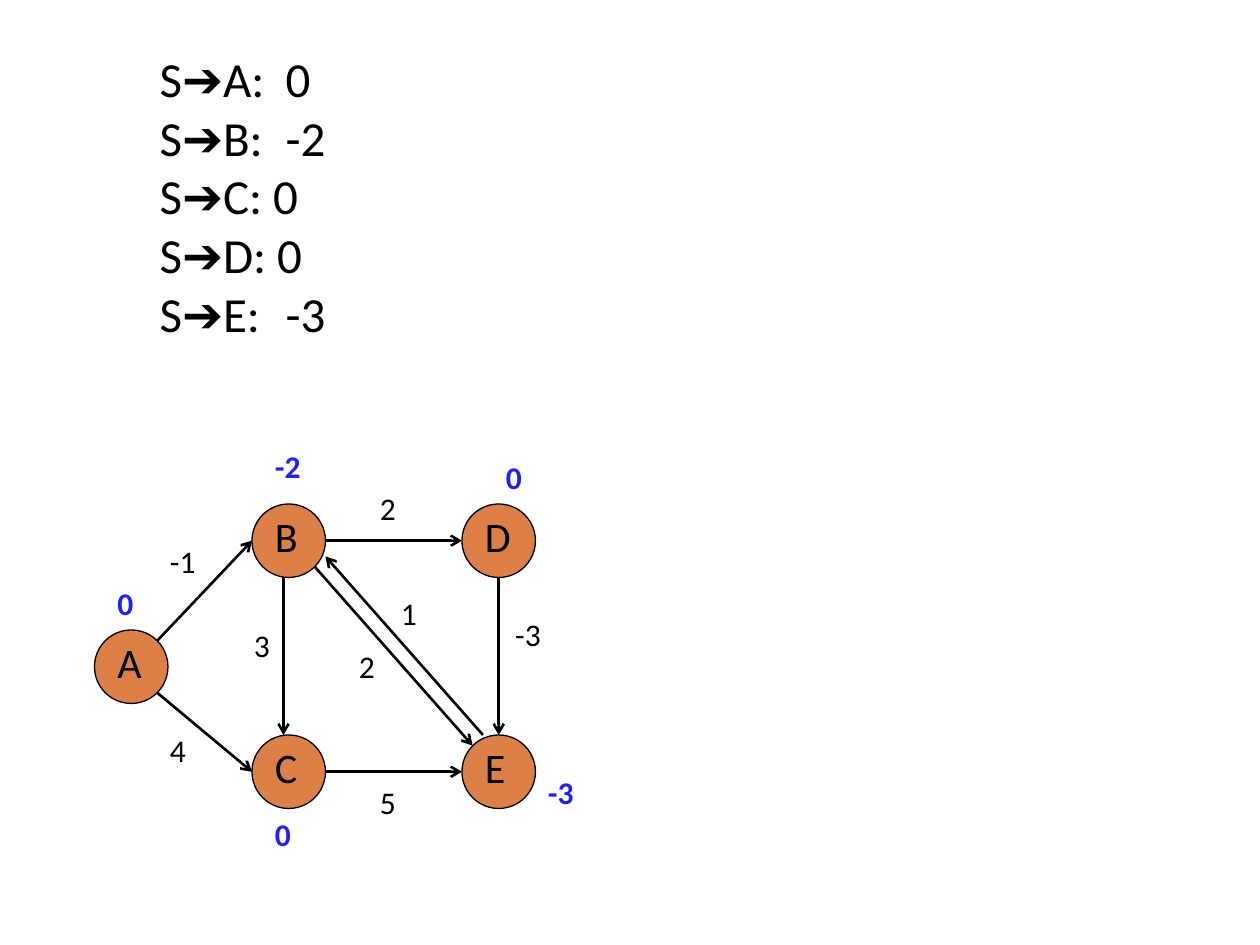
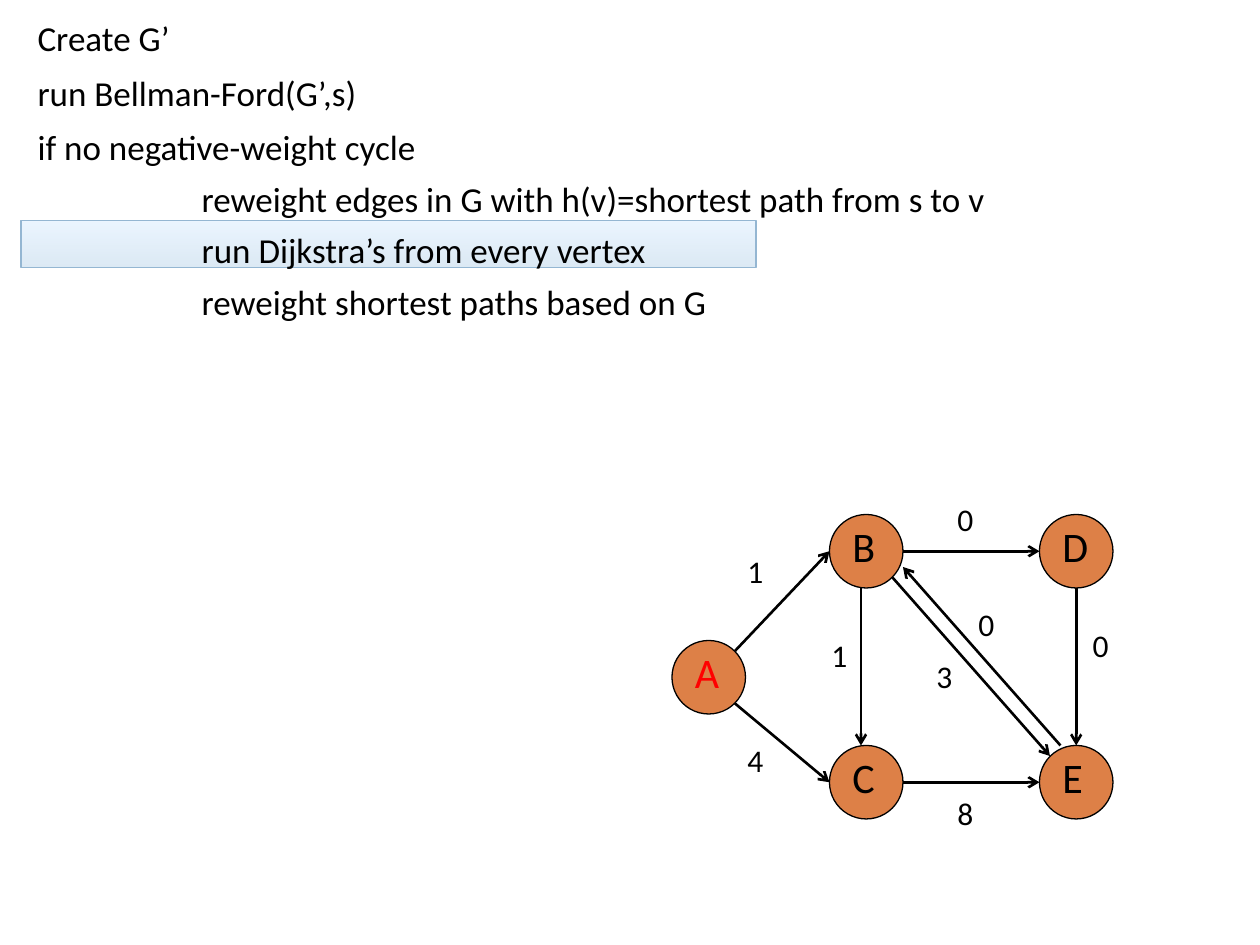
from lxml.etree import SubElement
from pptx import Presentation
from pptx.dml.color import RGBColor as Rgb
from pptx.enum.shapes import MSO_CONNECTOR as Connector, MSO_SHAPE as Preset
from pptx.enum.text import MSO_ANCHOR as Anchor, MSO_AUTO_SIZE as AutoSize
from pptx.oxml.ns import qn
from pptx.util import Pt

# Content: (span text, font role) lists, graph nodes and edges
DISTANCE_LINES = ["A:\t0", "B: \t-2", "C: 0", "D: 0", "E: \t-3"]
ALGORITHM_STEPS = [
    (0, "Create G’"),
    (0, "run Bellman-Ford(G’,s)"),
    (0, "if no negative-weight cycle"),
    (1, "reweight edges in G with h(v)=shortest path from s to v"),
    (1, "run Dijkstra’s from every vertex"),
    (1, "reweight shortest paths based on G"),
]
NODES = {"A": (72, 480), "B": (192, 384), "C": (192, 560), "E": (352, 560), "D": (352, 384)}
# Edge: start, end, place of its weight
EDGES = {
    "AB": ((120, 488), (192, 412), (120, 408)),
    "AC": ((120, 528), (192, 588), (120, 552)),
    "BD": ((248, 412), (352, 412), (280, 368)),
    "DE": ((380, 440), (380, 560), (383, 464)),
    "EB": ((368, 560), (248, 424), (296, 448)),
    "BE": ((240, 432), (360, 568), (264, 488)),
    "CE": ((248, 588), (352, 588), (280, 592)),
    "BC": ((216, 440), (216, 560), (184, 472)),
}
ORIGINAL_WEIGHTS = {"AB": "-1", "AC": "4", "BD": "2", "DE": "-3",
                    "EB": "1", "BE": "2", "CE": "5", "BC": "3"}
REWEIGHTED = {"AB": "1", "AC": "4", "BD": "0", "DE": "0",
              "EB": "0", "BE": "3", "CE": "8", "BC": "1"}
DISTANCES = [("-2", (200, 336)), ("0", (80, 440)), ("0", (200, 616)),
             ("0", (376, 344)), ("-3", (408, 584))]

# Layout, in px at 96 to the inch
PX = 9525
PAGE_SIZE = (960, 720)
NODE_SIZE, NAME_INSET, NAME_SIZE = 56, 8, 48
LABEL_HEIGHT = 38
LABEL_WIDTHS = {1: 33, 2: 41}
REWEIGHTED_SHIFT = (440, 8)
DISTANCE_BOX = (112, 32, 248, 236)
STEPS_BOX = (19, 8, 808, 248)
HIGHLIGHT_BOX = (16, 168, 560, 36)
STEP_INDENT = 125


class Theme:
    font, symbol_font = "Calibri", "Arial"
    black, red, blue = (Rgb.from_string(c) for c in ("000000", "FF0000", "1F1FFF"))
    node = Rgb.from_string("DD8047")
    highlight_line = Rgb.from_string("94B6D2")
    highlight_stops = [Rgb.from_string(c) for c in ("8BB7DB", "BDDFFF")]
    highlight_alpha = "30000"
    distance_size, node_size, step_size, label_size = Pt(28), Pt(24), Pt(20), Pt(18)
    step_gaps = [Pt(7), Pt(5.5)]
    outline, edge, highlight_edge = Pt(0.75), Pt(1.5), Pt(0.79)


def emu(*lengths):
    return [length * PX for length in lengths]


def apply(target, **values):
    for name, value in values.items():
        setattr(target, name, value)


def add_span(para, text, size, color=Theme.black, font=Theme.font, bold=False):
    span = para.add_run()
    span.text = text
    apply(span.font, name=font, size=size, bold=bold)
    span.font.color.rgb = color


def add_text(shapes, text, place, size, wrap=False, **look):
    box = shapes.add_textbox(*emu(*place))
    apply(box.text_frame, word_wrap=wrap, auto_size=AutoSize.NONE)
    add_span(box.text_frame.paragraphs[0], text, size, **look)


def add_label(page, text, spot, **look):
    place = (*spot, LABEL_WIDTHS[len(text)], LABEL_HEIGHT)
    add_text(page.shapes, text, place, Theme.label_size, **look)


def add_node(page, name, left, top, color):
    shapes = page.shapes.add_group_shape().shapes
    circle = shapes.add_shape(Preset.OVAL, *emu(left, top, NODE_SIZE, NODE_SIZE))
    circle.shadow.inherit = False
    circle.fill.solid()
    circle.fill.fore_color.rgb = Theme.node
    circle.line.color.rgb = Theme.black
    circle.line.width = Theme.outline
    place = (left + NAME_INSET, top, NAME_SIZE, NAME_SIZE)
    add_text(shapes, name, place, Theme.node_size, wrap=True, color=color)


def add_arrow(page, start, end):
    arrow = page.shapes.add_connector(Connector.STRAIGHT, *emu(*start, *end))
    arrow.line.color.rgb = Theme.black
    arrow.line.width = Theme.edge
    properties = arrow._element.spPr
    SubElement(properties.find(qn("a:ln")), qn("a:tailEnd"), type="arrow")
    SubElement(properties, qn("a:effectLst"))


def add_graph(page, weights, shift=(0, 0), source=None):
    def moved(spot):
        return spot[0] + shift[0], spot[1] + shift[1]

    for name, corner in NODES.items():
        add_node(page, name, *moved(corner), Theme.red if name == source else Theme.black)
    for start, end, _ in EDGES.values():
        add_arrow(page, moved(start), moved(end))
    for edge, (_, _, spot) in EDGES.items():
        add_label(page, weights[edge], moved(spot))


def add_list_page(deck):
    page = deck.slides.add_slide(deck.slide_layouts[1])
    title = page.shapes.title._element
    title.getparent().remove(title)
    return page


def fill_body(page, place, lines):
    """Each line is (level, space before, indent in px, spans)."""
    body = page.placeholders[1]
    apply(body, **dict(zip(("left", "top", "width", "height"), emu(*place))))
    frame = body.text_frame
    apply(frame, word_wrap=True, auto_size=AutoSize.NONE, vertical_anchor=Anchor.TOP)
    for number, (level, gap, indent, spans) in enumerate(lines):
        para = frame.add_paragraph() if number else frame.paragraphs[0]
        apply(para, level=level, space_before=gap)
        properties = para._p.get_or_add_pPr()
        properties.set("marL", str(indent * PX))
        properties.set("indent", "0")
        SubElement(properties, qn("a:buNone"))
        for span in spans:
            add_span(para, **span)
    # Keep the list in front of the shapes
    page.shapes._spTree.append(body._element)


def add_highlight(page):
    band = page.shapes.add_shape(Preset.RECTANGLE, *emu(*HIGHLIGHT_BOX))
    band.shadow.inherit = False
    band.fill.gradient()
    band.fill.gradient_angle = 90
    for stop, color, position in zip(band.fill.gradient_stops, Theme.highlight_stops, (0, 1)):
        stop.color.rgb = color
        stop.position = position
    for color in band._element.spPr.find(qn("a:gradFill")).iter(qn("a:srgbClr")):
        SubElement(color, qn("a:alpha"), val=Theme.highlight_alpha)
    band.line.color.rgb = Theme.highlight_line
    band.line.width = Theme.highlight_edge


def build_distances(deck):
    page = add_list_page(deck)
    add_graph(page, ORIGINAL_WEIGHTS)
    for text, spot in DISTANCES:
        add_label(page, text, spot, color=Theme.blue, bold=True)
    size = Theme.distance_size
    fill_body(page, DISTANCE_BOX, [
        (0, Pt(0), 0, [dict(text="S", size=size),
                       dict(text="➔", size=size, font=Theme.symbol_font),
                       dict(text=line, size=size)])
        for line in DISTANCE_LINES])


def build_algorithm(deck):
    page = add_list_page(deck)
    add_graph(page, REWEIGHTED, REWEIGHTED_SHIFT, source="A")
    add_highlight(page)
    fill_body(page, STEPS_BOX, [
        (level, Theme.step_gaps[level], level * STEP_INDENT,
         [dict(text=step, size=Theme.step_size)])
        for level, step in ALGORITHM_STEPS])


def main():
    deck = Presentation()
    deck.slide_width, deck.slide_height = emu(*PAGE_SIZE)
    build_distances(deck)
    build_algorithm(deck)
    deck.save("out.pptx")


if __name__ == "__main__":
    main()
